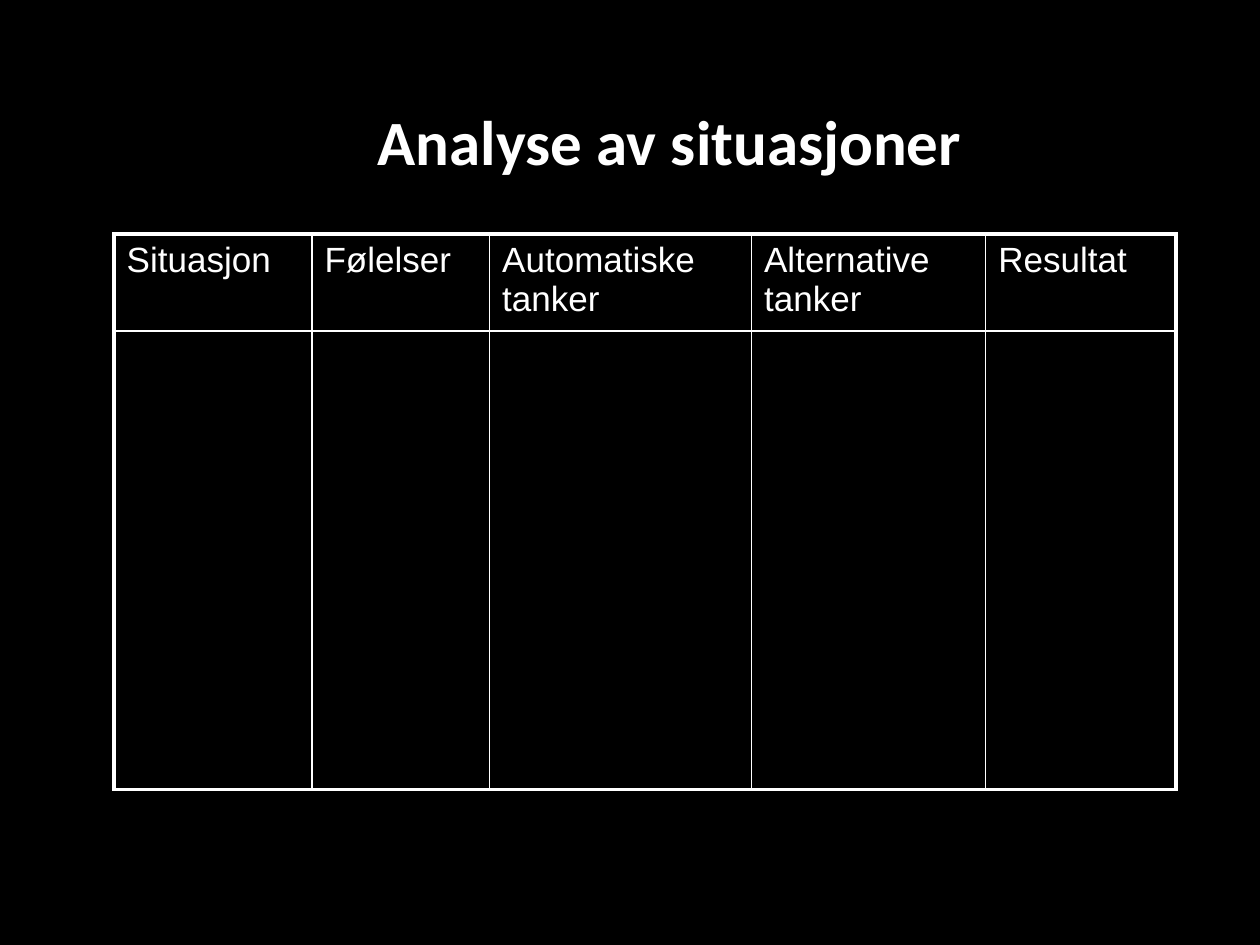
from lxml import etree
from pptx import Presentation
from pptx.dml.color import RGBColor
from pptx.enum.text import MSO_ANCHOR, PP_ALIGN
from pptx.oxml.ns import qn
from pptx.util import Cm, Pt

CENTER = PP_ALIGN.CENTER
LEFT = PP_ALIGN.LEFT
MIDDLE = MSO_ANCHOR.MIDDLE

COLORS = {"background": "000000", "foreground": "FFFFFF"}
HEADINGS = ["Situasjon", "Følelser", "Automatiske tanker", "Alternative tanker", "Resultat"]
COLUMN_WIDTHS = [3.99, 3.58, 5.28, 4.72, 3.84]
ROW_HEIGHTS = [1.8, 9.25]
INNER_LINE, OUTER_LINE = 1, 2.25


def write_text(frame, text, *, size, font, bold=False, align=LEFT):
    para = frame.paragraphs[0]
    para.alignment = align
    span = para.add_run()
    span.text = text
    span.font.size = Pt(size)
    span.font.name = font
    span.font.bold = bold
    span.font.color.rgb = RGBColor.from_string(COLORS["foreground"])


def set_border(cell, side, width):
    line = etree.Element(qn(f"a:ln{side}"), w=str(Pt(width)))
    fill = etree.SubElement(line, qn("a:solidFill"))
    etree.SubElement(fill, qn("a:srgbClr"), val=COLORS["foreground"])
    return line


def frame_cell(cell, outer_sides):
    properties = cell._tc.get_or_add_tcPr()
    for index, side in enumerate("LRTB"):
        width = OUTER_LINE if outer_sides[side] else INNER_LINE
        properties.insert(index, set_border(cell, side, width))


def add_title(page, left, top, width, height):
    box = page.shapes.add_textbox(Cm(left), Cm(top), Cm(width), Cm(height))
    frame = box.text_frame
    frame.word_wrap = True
    frame.vertical_anchor = MIDDLE
    write_text(frame, "Analyse av situasjoner", size=36, font="Calibri", bold=True, align=CENTER)


def add_analysis_table(page, left, top):
    last_row, last_column = len(ROW_HEIGHTS) - 1, len(COLUMN_WIDTHS) - 1
    table = page.shapes.add_table(
        len(ROW_HEIGHTS), len(COLUMN_WIDTHS), Cm(left), Cm(top),
        Cm(sum(COLUMN_WIDTHS)), Cm(sum(ROW_HEIGHTS)),
    ).table
    table.first_row = False
    table.horz_banding = False
    for column, width in zip(table.columns, COLUMN_WIDTHS):
        column.width = Cm(width)
    for row_index, (row, height) in enumerate(zip(table.rows, ROW_HEIGHTS)):
        row.height = Cm(height)
        for column_index, cell in enumerate(row.cells):
            cell.fill.background()
            frame_cell(cell, {
                "L": column_index == 0,
                "R": column_index == last_column,
                "T": row_index == 0,
                "B": row_index == last_row,
            })
    for cell, heading in zip(table.rows[0].cells, HEADINGS):
        write_text(cell.text_frame, heading, size=20, font="Arial")


def main():
    deck = Presentation()
    deck.slide_width, deck.slide_height = Cm(25.4), Cm(19.05)
    page = deck.slides.add_slide(deck.slide_layouts[6])
    fill = page.background.fill
    fill.solid()
    fill.fore_color.rgb = RGBColor.from_string(COLORS["background"])
    add_title(page, 2.49, 1.73, 22.02, 2.21)
    add_analysis_table(page, 2.3, 4.72)
    deck.save("out.pptx")


if __name__ == "__main__":
    main()
